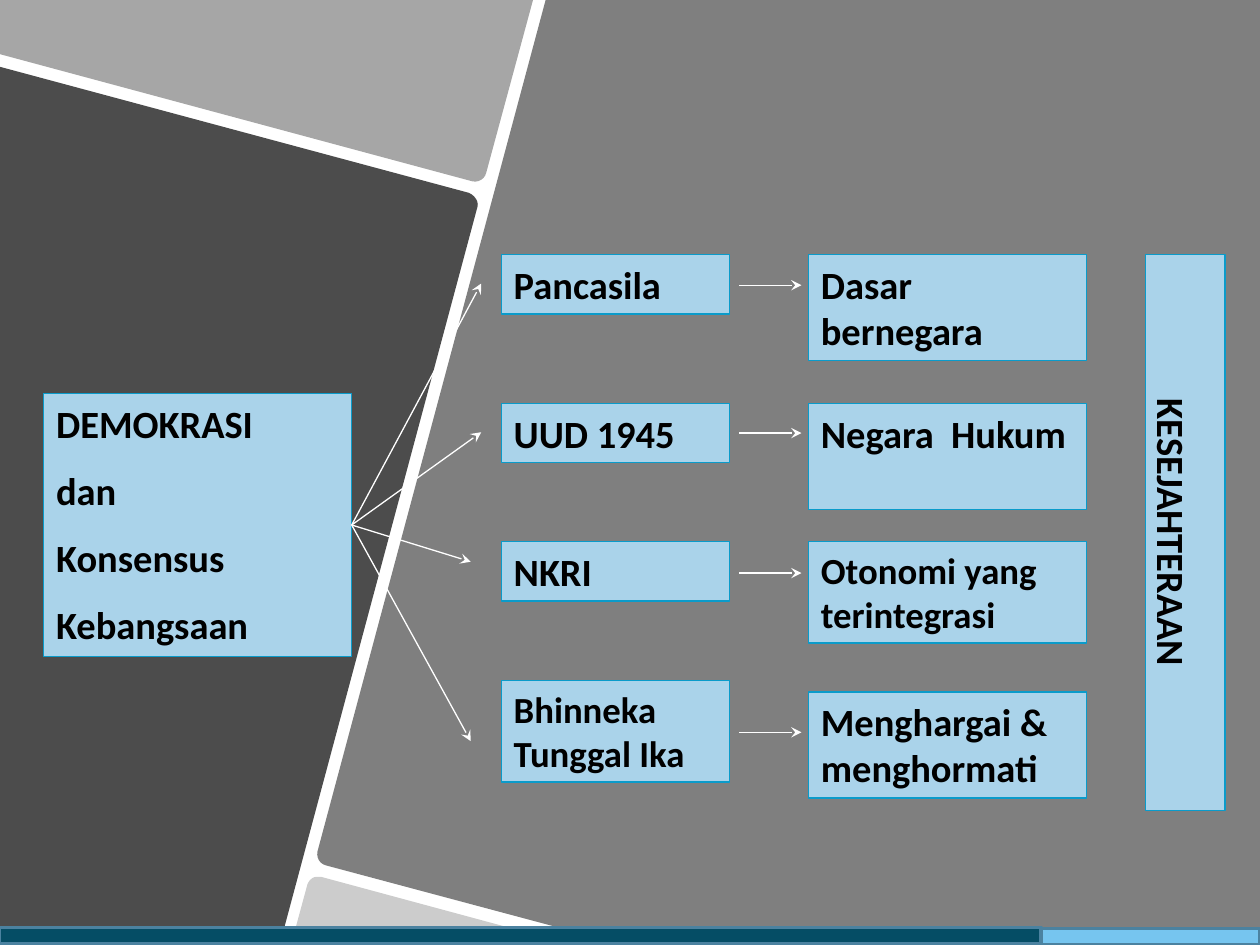
import lxml.etree
import pptx
import pptx.util
import pptx.dml.color
import pptx.enum.shapes
import pptx.enum.text
import pptx.oxml.ns

Pt = pptx.util.Pt
RECT = pptx.enum.shapes.MSO_SHAPE.RECTANGLE
qn = pptx.oxml.ns.qn

THEME = {
    "font": "Calibri", "size": 22, "small": 21,
    "text": "000000", "tile": "000000", "arrow": "FFFFFF",
    "box": "AAD3EA", "box_line": "0A9BCA",
    "strip": "76C5EF", "strip_dark": "054D65", "strip_line": "4B82A0",
    "thin": 0.75, "thick": 2,
}

# Background tiles: opacity %, outline; three pairs in one entry are a curve
TILES = [
    (70, [(0, 38.2), (267.8, 110.2),
          ((271.4, 111.6), (273.6, 115.2), (272.9, 118.1)),
          (159.8, 540), (0, 540)]),
    (35, [(0, 0), (304.6, 0), (277.9, 98.6),
          ((277.2, 102.2), (273.6, 104.4), (270, 103.7)), (0, 31)]),
    (20, [(183.6, 501.1), (327.6, 540), (166.3, 540), (175.7, 505.4),
          ((176.4, 503.3), (178.6, 501.1), (180.7, 501.1))]),
    (50, [(311.8, 0), (720, 0), (720, 540), (356.4, 540), (186.5, 494.6),
          ((182.9, 493.9), (180.7, 490.3), (181.4, 486.7))]),
]

SOURCE = ["DEMOKRASI", "dan", "Konsensus", "Kebangsaan"]
SOURCE_BOX = (25, 225, 176, 150)

# Column positions: left, width
PILLAR_COLUMN = (286.5, 130.5)
MEANING_COLUMN = (462, 159)
LINK_X = (422.5, 458)

# Each column entry: lines, top, height, type size
PILLARS = [
    (["Pancasila"], 145.5, 34, "size"),
    (["UUD 1945"], 230.5, 34, "size"),
    (["NKRI"], 309.5, 34, "size"),
    (["Bhinneka Tunggal Ika"], 389, 58, "small"),
]
MEANINGS = [
    (["Dasar bernegara"], 145.5, 60.5, "size"),
    (["Negara  Hukum"], 230.5, 60.5, "size"),
    (["Otonomi yang", "terintegrasi"], 309.5, 58, "small"),
    (["Menghargai & menghormati"], 395.5, 60.5, "size"),
]
FAN_ENDS = [(275, 162), (275, 247), (269, 321), (269, 423.5)]
LINK_YS = [163, 247.5, 327.5, 418.5]

GOAL = ["KESEJAHTERAAN"]
GOAL_BOX = (518.5, 281.5, 317.5, 45.5)
STRIPS = [((0, 530.5, 720, 9.5), "strip"),
          ((-0.5, 530, 595.5, 9.5), "strip_dark")]

prs = pptx.Presentation()
prs.slide_width, prs.slide_height = Pt(720), Pt(540)
slide = prs.slides.add_slide(prs.slide_layouts[6])
shapes = slide.shapes


def apply(target, values):
    for name, value in values.items():
        setattr(target, name, value)


def color(name):
    return pptx.dml.color.RGBColor.from_string(THEME[name])


def stroke(line, name, width):
    line.color.rgb = color(name)
    line.width = Pt(THEME[width])


def flatten(outline, steps=6):
    """Turn an outline with cubic curves into plain points."""
    points = []
    for entry in outline:
        if not isinstance(entry[0], tuple):
            points.append(entry)
            continue
        control = (points[-1],) + entry
        for step in range(1, steps + 1):
            t = step / steps
            weights = ((1 - t) ** 3, 3 * t * (1 - t) ** 2,
                       3 * t * t * (1 - t), t ** 3)
            points.append(tuple(sum(w * p[axis] for w, p in zip(weights, control))
                                for axis in (0, 1)))
    return [(Pt(x), Pt(y)) for x, y in points]


def add_tile(opacity, outline):
    start, *rest = flatten(outline)
    builder = shapes.build_freeform(*start)
    builder.add_line_segments(rest, close=True)
    tile = builder.convert_to_shape()
    tile.shadow.inherit = False
    tile.fill.solid()
    tile.fill.fore_color.rgb = color("tile")
    tile.line.fill.background()
    shade = tile._element.spPr.find(qn("a:solidFill"))[0]
    lxml.etree.SubElement(shade, qn("a:alpha"), val=str(opacity * 1000))


def add_rect(place, fill, line, width):
    rect = shapes.add_shape(RECT, *map(Pt, place))
    rect.shadow.inherit = False
    rect.fill.solid()
    rect.fill.fore_color.rgb = color(fill)
    stroke(rect.line, line, width)
    return rect


def add_box(lines, place, size="size", gap=0, **paragraph_format):
    box = add_rect(place, "box", "box_line", "thin")
    frame = box.text_frame
    apply(frame, {
        "word_wrap": True,
        "auto_size": pptx.enum.text.MSO_AUTO_SIZE.SHAPE_TO_FIT_TEXT,
        "vertical_anchor": pptx.enum.text.MSO_ANCHOR.TOP,
    })
    for index, text in enumerate(lines):
        paragraph = frame.add_paragraph() if index else frame.paragraphs[0]
        apply(paragraph, {"alignment": pptx.enum.text.PP_ALIGN.LEFT,
                          **paragraph_format})
        if index and gap:
            paragraph.space_before = Pt(gap)
        run = paragraph.add_run()
        run.text = text
        apply(run.font, {"name": THEME["font"], "size": Pt(THEME[size]),
                         "bold": True})
        run.font.color.rgb = color("text")
    return box


def add_arrow(start, end):
    arrow = shapes.add_connector(pptx.enum.shapes.MSO_CONNECTOR.STRAIGHT,
                                 *map(Pt, start + end))
    stroke(arrow.line, "arrow", "thin")
    properties = arrow._element.spPr
    lxml.etree.SubElement(properties.find(qn("a:ln")), qn("a:tailEnd"), type="stealth")
    lxml.etree.SubElement(properties, qn("a:effectLst"))
    return arrow


# Background
for opacity, outline in TILES:
    add_tile(opacity, outline)

# Boxes
source = add_box(SOURCE, SOURCE_BOX, gap=12)
for (left, width), entries in ((PILLAR_COLUMN, PILLARS), (MEANING_COLUMN, MEANINGS)):
    for lines, top, height, size in entries:
        add_box(lines, (left, top, width, height), size)

# Arrows fanning out from the source, then from pillar to meaning
left, top, width, height = SOURCE_BOX
for end in FAN_ENDS:
    add_arrow((left + width, top + height / 2), end).begin_connect(source, 3)
for y in LINK_YS:
    add_arrow((LINK_X[0], y), (LINK_X[1], y))

# Goal bar and bottom strips
goal = add_box(GOAL, GOAL_BOX, line_spacing=1.5,
               alignment=pptx.enum.text.PP_ALIGN.CENTER)
goal.rotation = 90
for place, fill in STRIPS:
    add_rect(place, fill, "strip_line", "thick")

prs.save("out.pptx")
